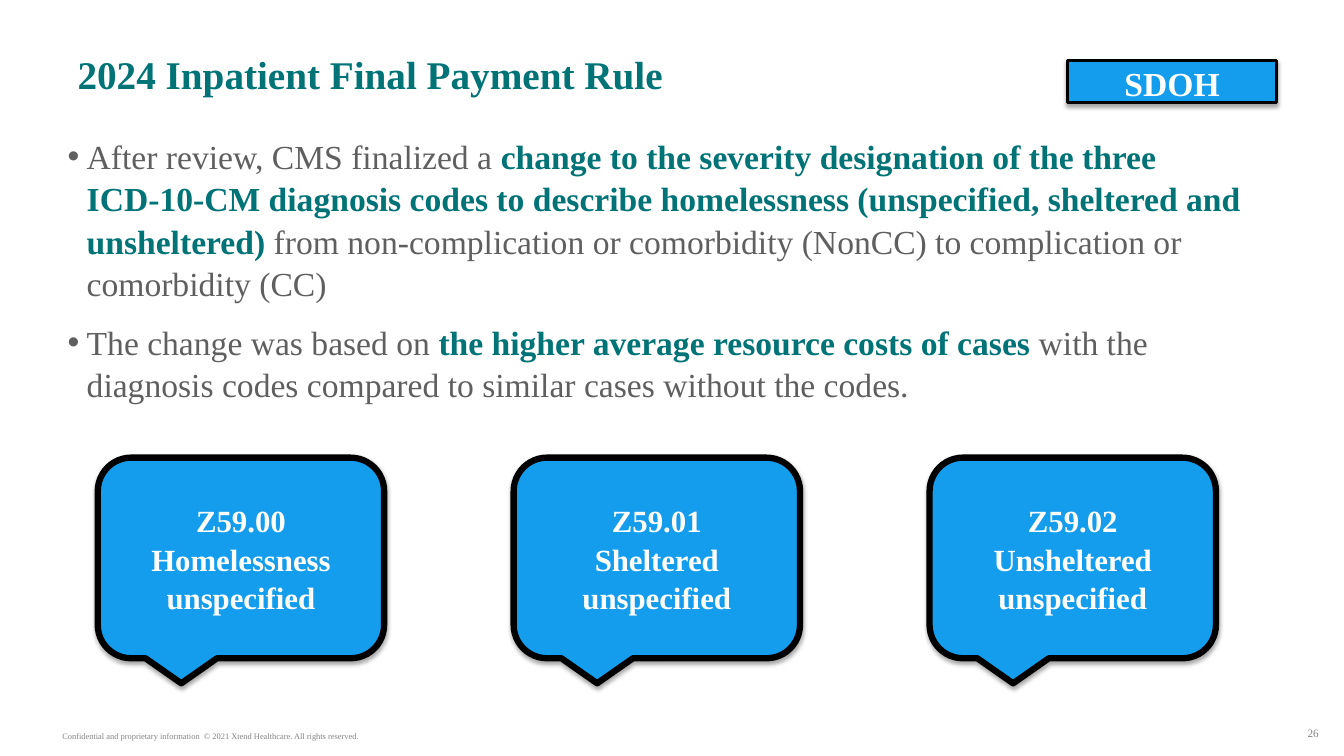
from lxml import etree
from pptx import Presentation
from pptx.dml.color import RGBColor
from pptx.enum.shapes import MSO_SHAPE
from pptx.enum.text import MSO_ANCHOR, PP_ALIGN
from pptx.oxml.ns import qn
from pptx.util import Inches, Pt

RECTANGLE = MSO_SHAPE.RECTANGLE
CALLOUT = MSO_SHAPE.ROUNDED_RECTANGULAR_CALLOUT
MIDDLE = MSO_ANCHOR.MIDDLE
LEFT, CENTER, RIGHT = PP_ALIGN.LEFT, PP_ALIGN.CENTER, PP_ALIGN.RIGHT

FONT = "Times New Roman"
TEAL, GRAY, FOOTER_GRAY = "007377", "5F5F5F", "838383"
BLUE, BLACK, WHITE = "139DEC", "000000", "FFFFFF"
LINE_SPACING = 1.05

BULLETS = [
    [("After review, CMS finalized a ", False),
     ("change to the severity designation of the three ICD-10-CM diagnosis codes "
      "to describe homelessness (unspecified, sheltered and unsheltered) ", True),
     ("from non-complication or comorbidity (NonCC) to complication or "
      "comorbidity (CC)", False)],
    [("The change was based on ", False),
     ("the higher average resource costs of cases ", True),
     ("with the diagnosis codes compared to similar cases without the codes.", False)],
]
CODES = [
    ("Z59.00", "Homelessness unspecified"),
    ("Z59.01", "Sheltered unspecified"),
    ("Z59.02", "Unsheltered unspecified"),
]


def color(value):
    return RGBColor.from_string(value)


def add_run(paragraph, text, size, text_color, bold=False):
    run = paragraph.add_run()
    run.text = text
    run.font.name = FONT
    run.font.size = Pt(size)
    run.font.bold = bold
    run.font.color.rgb = color(text_color)


def add_text_box(slide, left, top, width, height, side_inset=0, wrap=True):
    box = slide.shapes.add_textbox(
        Inches(left), Inches(top), Inches(width), Inches(height))
    frame = box.text_frame
    frame.word_wrap = wrap
    frame.margin_left = frame.margin_right = Inches(side_inset)
    return frame


def add_bullet(paragraph):
    properties = paragraph._p.get_or_add_pPr()
    properties.set("marL", str(Inches(0.19)))
    properties.set("indent", str(-Inches(0.19)))
    etree.SubElement(properties, qn("a:buFont")).set("typeface", "Arial")
    etree.SubElement(properties, qn("a:buChar")).set("char", "•")


def add_soft_shadow(shape):
    shape.shadow.inherit = False
    effects = shape._element.spPr.find(qn("a:effectLst"))
    shadow = etree.SubElement(
        effects, qn("a:outerShdw"), blurRad=str(Pt(3.1)), dist=str(Pt(1.8)),
        dir="5400000", rotWithShape="0")
    shadow_color = etree.SubElement(shadow, qn("a:srgbClr"), val=BLACK)
    etree.SubElement(shadow_color, qn("a:alpha"), val="35000")


def add_blue_shape(slide, kind, left, top, width, height, line_width, lines, size):
    shape = slide.shapes.add_shape(
        kind, Inches(left), Inches(top), Inches(width), Inches(height))
    shape.fill.solid()
    shape.fill.fore_color.rgb = color(BLUE)
    shape.line.color.rgb = color(BLACK)
    shape.line.width = Pt(line_width)
    add_soft_shadow(shape)
    frame = shape.text_frame
    frame.word_wrap = True
    frame.vertical_anchor = MIDDLE
    for index, text in enumerate(lines):
        paragraph = frame.paragraphs[0] if index == 0 else frame.add_paragraph()
        paragraph.alignment = CENTER
        paragraph.line_spacing = LINE_SPACING
        add_run(paragraph, text, size, WHITE, bold=True)


def add_header(slide, left, top, width, height):
    frame = add_text_box(slide, left, top, width, height)
    paragraph = frame.paragraphs[0]
    paragraph.line_spacing = LINE_SPACING
    add_run(paragraph, "2024 Inpatient Final Payment Rule", 28, TEAL, bold=True)
    # Topic tag at the right
    add_blue_shape(slide, RECTANGLE, left + 9.82, top + 0.17, 2.07, 0.42,
                   2.25, ["SDOH"], 24)


def add_body(slide, left, top, width, height):
    frame = add_text_box(slide, left, top, width, height)
    for index, parts in enumerate(BULLETS):
        paragraph = frame.paragraphs[0] if index == 0 else frame.add_paragraph()
        add_bullet(paragraph)
        paragraph.line_spacing = LINE_SPACING
        if index:
            paragraph.space_before = Pt(12)
        for text, emphasized in parts:
            add_run(paragraph, text, 24, TEAL if emphasized else GRAY, emphasized)


def add_code_callouts(slide, left, top, width, height):
    callout_width = 2.84
    step = (width - callout_width) / (len(CODES) - 1)
    for index, lines in enumerate(CODES):
        add_blue_shape(slide, CALLOUT, left + index * step, top,
                       callout_width, height, 4.5, lines, 22)


def add_footer(slide, left, top, width, height):
    notice = add_text_box(slide, left, top + 0.04, 3.16, 0.2, 0.1, wrap=False)
    add_run(notice.paragraphs[0],
            "Confidential and proprietary information  © 2021 Xtend Healthcare. "
            "All rights reserved.", 6, FOOTER_GRAY)
    # Slide number
    number = add_text_box(slide, left + width - 0.76, top, 0.76, height)
    number.paragraphs[0].alignment = RIGHT
    add_run(number.paragraphs[0], "26", 8, FOOTER_GRAY)


def main():
    presentation = Presentation()
    presentation.slide_width = Inches(13.33)
    presentation.slide_height = Inches(7.5)
    slide = presentation.slides.add_slide(presentation.slide_layouts[6])
    add_footer(slide, 0.52, 7.16, 12.56, 0.27)
    add_header(slide, 0.77, 0.43, 12, 0.66)
    add_body(slide, 0.67, 1.28, 12, 2.81)
    add_code_callouts(slide, 0.97, 4.54, 11.09, 1.99)
    presentation.save("out.pptx")


if __name__ == "__main__":
    main()
